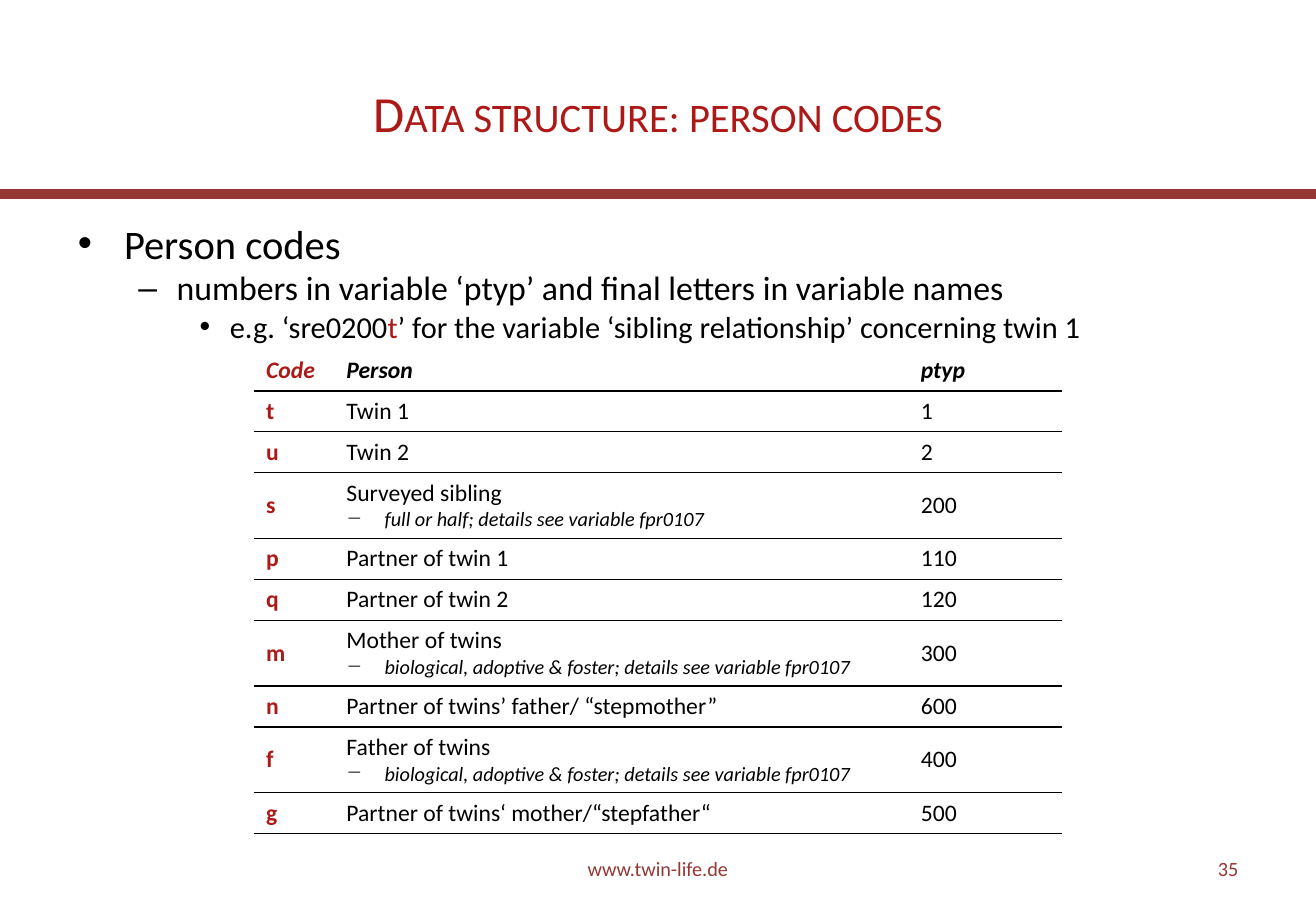
from dataclasses import dataclass

from lxml import etree
from pptx import Presentation
from pptx.dml.color import RGBColor
from pptx.enum.shapes import MSO_CONNECTOR
from pptx.enum.text import MSO_ANCHOR, MSO_AUTO_SIZE, PP_ALIGN
from pptx.oxml.ns import qn
from pptx.util import Emu, Inches, Pt

STRAIGHT = MSO_CONNECTOR.STRAIGHT
MIDDLE = MSO_ANCHOR.MIDDLE
CENTER, RIGHT = PP_ALIGN.CENTER, PP_ALIGN.RIGHT
NO_AUTOFIT = MSO_AUTO_SIZE.NONE

FONT = "Calibri"
RED, MAROON, BLACK = "AD1917", "953735", "000000"
SLIDE_WIDTH, SLIDE_HEIGHT = Inches(10.83), Inches(7.5)
COLUMN, ROW = SLIDE_WIDTH / 20, SLIDE_HEIGHT / 30
NO_STYLE_NO_GRID = "{2D5ABB26-0587-4C30-8999-92F81FD0307C}"
CODE_COLUMNS = (1.22, 8.73, 2.33)
PLAIN_ROW, DETAIL_ROW = 1.35, 2.16


@dataclass
class Bullet:
    phrases: list[tuple[str, str]]
    size: int
    mark: str
    margin: float
    hanging: float


@dataclass
class PersonCode:
    letter: str
    person: str
    ptyp: str
    detail: str = ""


@dataclass
class Footer:
    text: str
    left: float
    width: float
    align: PP_ALIGN


BULLETS = [
    Bullet([("Person codes", BLACK)], 24, "•", 0.7, 0.7),
    Bullet([("numbers in variable ‘ptyp’ and final letters in variable names", BLACK)],
           20, "–", 1.5, 0.58),
    Bullet([("e.g. ‘sre0200", BLACK), ("t", RED),
            ("’ for the variable ‘sibling relationship’ concerning twin 1", BLACK)],
           18, "•", 2.31, 0.46),
]
PARENT_DETAIL = "biological, adoptive & foster; details see variable fpr0107"
PERSON_CODES = [
    PersonCode("Code", "Person", "ptyp"),
    PersonCode("t", "Twin 1", "1"),
    PersonCode("u", "Twin 2", "2"),
    PersonCode("s", "Surveyed sibling", "200", "full or half; details see variable fpr0107"),
    PersonCode("p", "Partner of twin 1", "110"),
    PersonCode("q", "Partner of twin 2", "120"),
    PersonCode("m", "Mother of twins", "300", PARENT_DETAIL),
    PersonCode("n", "Partner of twins’ father/ “stepmother”", "600"),
    PersonCode("f", "Father of twins", "400", PARENT_DETAIL),
    PersonCode("g", "Partner of twins‘ mother/“stepfather“", "500"),
]
FOOTERS = [
    Footer("www.twin-life.de", 6.83, 6.34, CENTER),
    Footer("35", 14.33, 4.67, RIGHT),
]


def columns(count: float) -> Emu:
    return Emu(round(COLUMN * count))


def rows(count: float) -> Emu:
    return Emu(round(ROW * count))


def color(value: str) -> RGBColor:
    return RGBColor.from_string(value)


def format_run(run, size: int, shade: str, bold: bool = False, italic: bool = False) -> None:
    run.font.name = FONT
    run.font.size = Pt(size)
    run.font.color.rgb = color(shade)
    run.font.bold = bold
    run.font.italic = italic


def set_bullet(paragraph, mark: str, margin: float, hanging: float) -> None:
    properties = paragraph._p.get_or_add_pPr()
    properties.set("marL", str(columns(margin)))
    properties.set("indent", str(-columns(hanging)))
    etree.SubElement(properties, qn("a:buChar")).set("char", mark)


def place(shape, left: float, top: float, width: float, height: float) -> None:
    shape.left, shape.top = columns(left), rows(top)
    shape.width, shape.height = columns(width), rows(height)


def draw_rule(slide) -> None:
    rule = slide.shapes.add_connector(STRAIGHT, 0, rows(6.4), SLIDE_WIDTH, rows(6.4))
    rule.line.color.rgb = color(MAROON)
    rule.line.width = Pt(6)
    etree.SubElement(rule._element.spPr, qn("a:effectLst"))


def draw_title(slide) -> None:
    title = slide.shapes.title
    place(title, 1, 1.2, 18, 5)
    frame = title.text_frame
    frame.text = "Data structure: person codes"
    frame.auto_size = NO_AUTOFIT
    frame.vertical_anchor = MIDDLE
    frame.paragraphs[0].alignment = CENTER
    run = frame.paragraphs[0].runs[0]
    format_run(run, 30, RED)
    run._r.get_or_add_rPr().set("cap", "small")


def draw_bullets(slide) -> None:
    body = slide.placeholders[1]
    place(body, 1, 7, 18, 19.8)
    frame = body.text_frame
    frame.auto_size = NO_AUTOFIT
    for level, bullet in enumerate(BULLETS):
        paragraph = frame.add_paragraph() if level else frame.paragraphs[0]
        paragraph.level = level
        paragraph.space_before = Pt(0)
        set_bullet(paragraph, bullet.mark, bullet.margin, bullet.hanging)
        for text, shade in bullet.phrases:
            run = paragraph.add_run()
            run.text = text
            format_run(run, bullet.size, shade)


def underline_cell(cell) -> None:
    cell.fill.background()
    border = etree.Element(qn("a:lnB"), w=str(Pt(1)))
    fill = etree.SubElement(border, qn("a:solidFill"))
    etree.SubElement(fill, qn("a:srgbClr")).set("val", BLACK)
    cell._tc.get_or_add_tcPr().insert(0, border)


def draw_person_codes(slide) -> None:
    heights = [DETAIL_ROW if code.detail else PLAIN_ROW for code in PERSON_CODES]
    table = slide.shapes.add_table(
        len(PERSON_CODES), len(CODE_COLUMNS), columns(3.86), rows(11.52),
        columns(sum(CODE_COLUMNS)), rows(sum(heights))).table
    table._tbl.tblPr.find(qn("a:tableStyleId")).text = NO_STYLE_NO_GRID
    table.horz_banding = False
    for column, width in zip(table.columns, CODE_COLUMNS):
        column.width = columns(width)
    for index, (code, height) in enumerate(zip(PERSON_CODES, heights)):
        table.rows[index].height = rows(height)
        header = index == 0
        for position, text in enumerate((code.letter, code.person, code.ptyp)):
            cell = table.cell(index, position)
            cell.text_frame.text = text
            cell.vertical_anchor = MIDDLE
            is_letter = position == 0
            format_run(cell.text_frame.paragraphs[0].runs[0], 14,
                       RED if is_letter else BLACK, header or is_letter, header)
            underline_cell(cell)
        if code.detail:
            detail = table.cell(index, 1).text_frame.add_paragraph()
            detail.text = code.detail
            set_bullet(detail, "−", 0.58, 0.58)
            format_run(detail.runs[0], 12, BLACK, italic=True)


def draw_footer(slide, footer: Footer) -> None:
    frame = slide.shapes.add_textbox(
        columns(footer.left), rows(27.8), columns(footer.width), rows(1.6)).text_frame
    frame.word_wrap = True
    frame.vertical_anchor = MIDDLE
    frame.text = footer.text
    frame.paragraphs[0].alignment = footer.align
    format_run(frame.paragraphs[0].runs[0], 12, MAROON)


def main() -> None:
    presentation = Presentation()
    presentation.slide_width, presentation.slide_height = SLIDE_WIDTH, SLIDE_HEIGHT
    slide = presentation.slides.add_slide(presentation.slide_layouts[1])
    draw_rule(slide)
    draw_title(slide)
    draw_bullets(slide)
    draw_person_codes(slide)
    for footer in FOOTERS:
        draw_footer(slide, footer)
    presentation.save("out.pptx")


if __name__ == "__main__":
    main()
